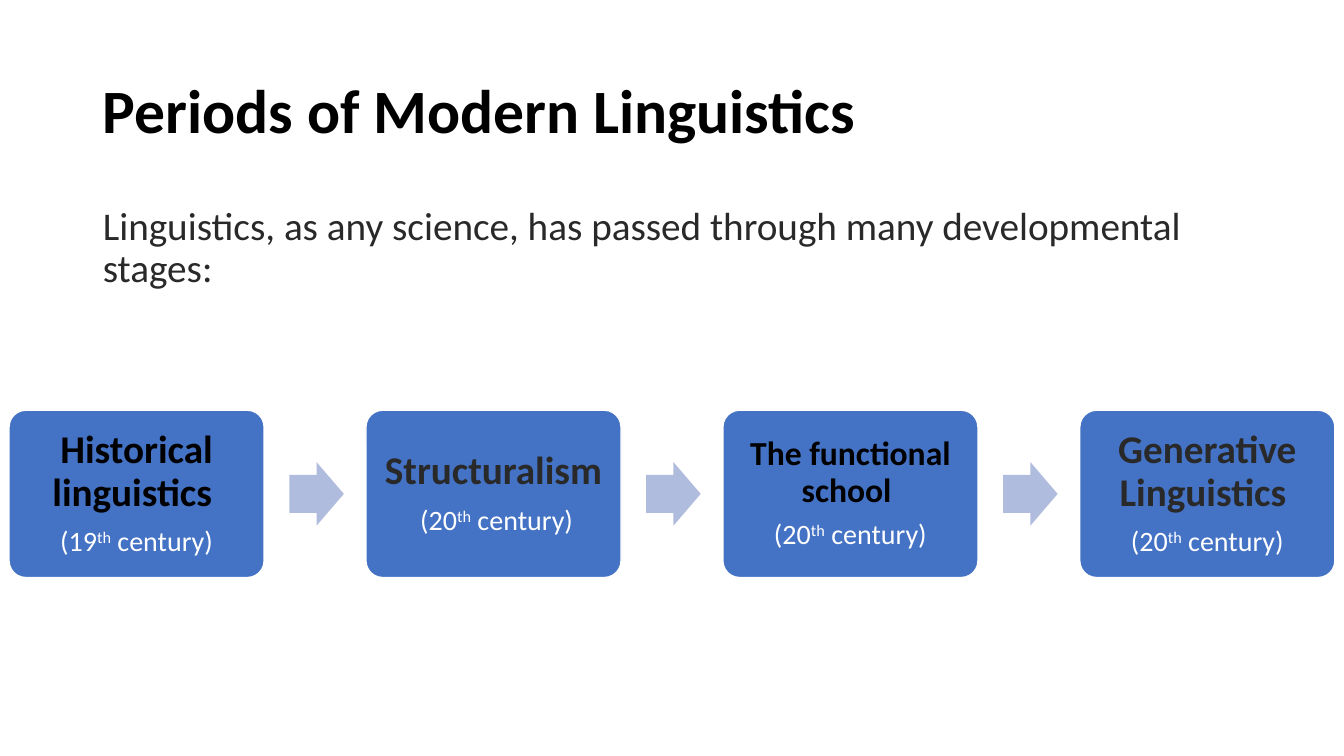
from pptx import Presentation
from pptx.dml.color import RGBColor
from pptx.enum.shapes import MSO_SHAPE as SHAPE
from pptx.enum.text import MSO_ANCHOR as ANCHOR, MSO_AUTO_SIZE as AUTO, PP_ALIGN as ALIGN
from pptx.oxml import parse_xml
from pptx.oxml.ns import nsdecls
from pptx.util import Inches, Pt

BLACK, DARK, WHITE = "000000", "292929", "FFFFFF"
BLUE, PALE_BLUE = "4472C4", "B0BCDE"

STAGES = [
    ("Historical linguistics ", 28, BLACK, "(19"),
    ("Structuralism", 28, DARK, " (20"),
    ("The functional school ", 24, BLACK, "(20"),
    ("Generative Linguistics ", 28, DARK, "(20"),
]


def color(hex_code):
    return RGBColor.from_string(hex_code)


def add_text(p, text, size=20, fill=WHITE, bold=False, baseline=0):
    r = p.add_run()
    r.text = text
    r.font.name = "Calibri"
    r.font.size = Pt(size)
    r.font.bold = bold
    r.font.color.rgb = color(fill)
    if baseline:
        r._r.get_or_add_rPr().set("baseline", str(baseline * 1000))


def format_paragraph(p, align=ALIGN.LEFT, after=0):
    p.alignment = align
    p.line_spacing = 0.9
    p.space_before = Pt(0)
    p.space_after = Pt(after)


def fill_placeholder(sp, box, text, anchor, **fmt):
    sp.left, sp.top, sp.width, sp.height = map(Inches, box)
    tf = sp.text_frame
    tf.word_wrap = True
    tf.auto_size = AUTO.NONE
    tf.vertical_anchor = anchor
    p = tf.paragraphs[0]
    pPr = p._p.get_or_add_pPr()
    pPr.set("marL", "0")
    pPr.set("indent", "0")
    pPr.append(parse_xml(f"<a:buNone {nsdecls('a')}/>"))
    format_paragraph(p)
    add_text(p, text, **fmt)


def add_block(s, kind, box, fill, adjustments):
    sp = s.shapes.add_shape(kind, *map(Inches, box))
    sp.shadow.inherit = False
    sp.fill.solid()
    sp.fill.fore_color.rgb = color(fill)
    sp.line.fill.background()
    for i, value in enumerate(adjustments):
        sp.adjustments[i] = value
    return sp


def add_stage(s, box, name, size, fill, century):
    sp = add_block(s, SHAPE.ROUNDED_RECTANGLE, box, BLUE, [0.1])
    sp.line.color.rgb = color(WHITE)
    sp.line.width = Pt(1)
    tf = sp.text_frame
    tf.word_wrap = True
    tf.vertical_anchor = ANCHOR.MIDDLE
    tf.margin_left = tf.margin_right = Inches(0.1)
    tf.margin_top = tf.margin_bottom = Inches(0.1)
    p = tf.paragraphs[0]
    format_paragraph(p, ALIGN.CENTER, after=0.33 * size)
    add_text(p, name, size=size, fill=fill, bold=True)
    p = tf.add_paragraph()
    format_paragraph(p, ALIGN.CENTER)
    add_text(p, century)
    add_text(p, "th", baseline=30)
    add_text(p, " century)")


def add_process(s, box, stages):
    left, top, width, height = box
    stage_w = 2.53
    pitch = (width - stage_w) / (len(stages) - 1)
    arrow_w, arrow_h = 0.54, 0.63
    for i, stage in enumerate(stages):
        x = left + i * pitch
        if i:
            arrow = (x - 0.76, top + (height - arrow_h) / 2, arrow_w, arrow_h)
            add_block(s, SHAPE.RIGHT_ARROW, arrow, PALE_BLUE, [0.6, 0.5])
        add_stage(s, (x, top, stage_w, height), *stage)


def build_slide(prs):
    s = prs.slides.add_slide(prs.slide_layouts[1])
    title, body = s.placeholders
    fill_placeholder(title, (0.92, 0.4, 11.5, 1.45), "Periods of Modern Linguistics",
                     ANCHOR.MIDDLE, size=44, fill=BLACK, bold=True)
    fill_placeholder(body, (0.92, 2, 11.5, 1.04),
                     "Linguistics, as any science, has passed through many developmental stages:",
                     ANCHOR.TOP, size=28, fill=DARK)
    add_process(s, (0.09, 4.07, 13.15, 1.66), STAGES)


def main():
    prs = Presentation()
    prs.slide_width, prs.slide_height = Inches(13.33), Inches(7.5)
    build_slide(prs)
    prs.save("out.pptx")


if __name__ == "__main__":
    main()
